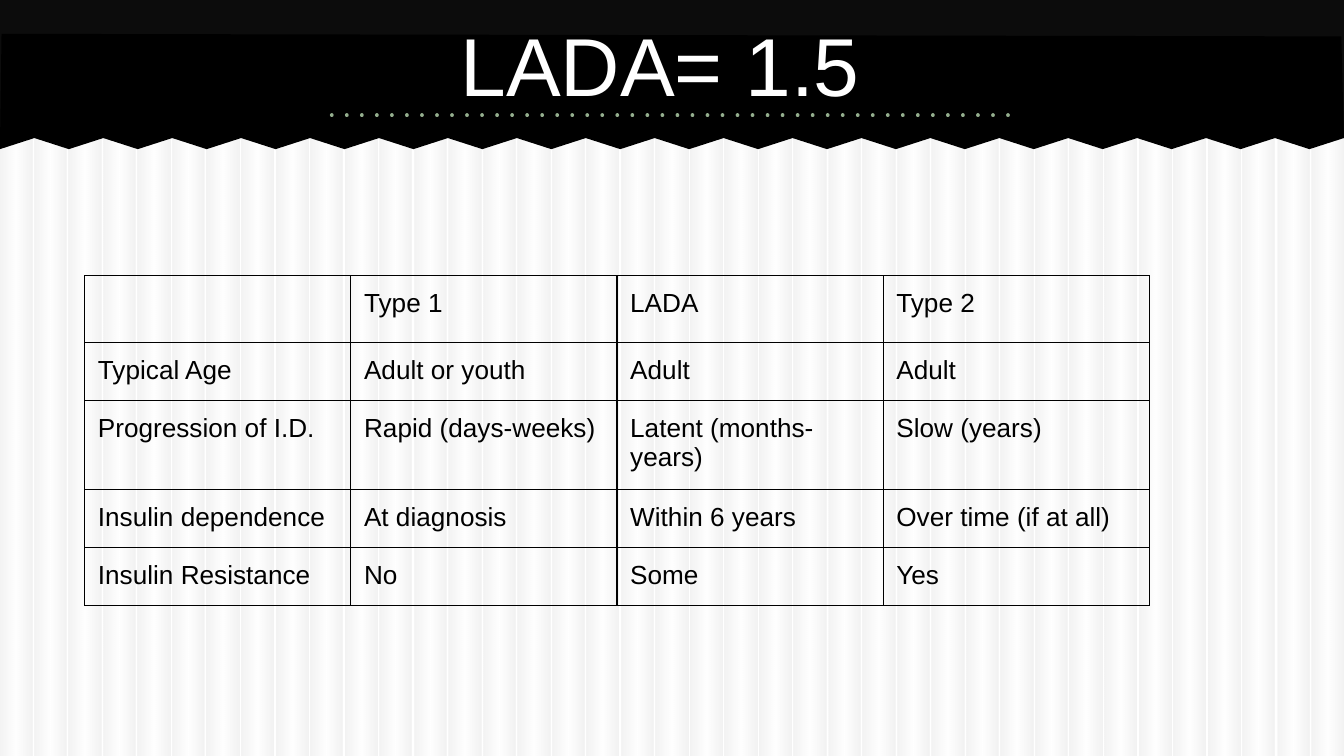
import pptx
import pptx.dml.color
import pptx.enum.shapes
import pptx.enum.text
import pptx.oxml
import pptx.oxml.ns
import pptx.util
from lxml import etree

Cm = pptx.util.Cm
qn = pptx.oxml.ns.qn
RECTANGLE = pptx.enum.shapes.MSO_SHAPE.RECTANGLE
NAMESPACE = 'xmlns:a="http://schemas.openxmlformats.org/drawingml/2006/main"'


def color(hex_string):
    return pptx.dml.color.RGBColor.from_string(hex_string)


def add_run(paragraph, text, size, hex_string):
    run = paragraph.add_run()
    run.text = text
    run.font.name = "Arial"
    run.font.size = pptx.util.Pt(size)
    run.font.color.rgb = color(hex_string)


presentation = pptx.Presentation()
presentation.slide_width = Cm(25.4)
presentation.slide_height = Cm(14.29)
slide = presentation.slides.add_slide(presentation.slide_layouts[6])
slide.background.fill.solid()
slide.background.fill.fore_color.rgb = color("FFFFFF")

# Striped backdrop
stripe_count = 39
stripe_stops = [(0, "BFBFBF"), (50, "FFFFFF"), (97, "BFBFBF"), (100, "BFBFBF")]
for index in range(stripe_count):
    left = Cm(24.79 * index / (stripe_count - 1))
    stripe = slide.shapes.add_shape(RECTANGLE, left, Cm(0.02), Cm(0.61), Cm(14.27))
    stripe.shadow.inherit = False
    stripe.line.fill.background()
    stripe.fill.gradient()
    stripe.fill.gradient_angle = 0
    stop_list = next(stripe.element.iter(qn("a:gsLst")))
    for stop in list(stop_list):
        stop_list.remove(stop)
    for position, hex_string in stripe_stops:
        stop_list.append(pptx.oxml.parse_xml(
            f'<a:gs {NAMESPACE} pos="{position * 1000}"><a:srgbClr val="{hex_string}">'
            '<a:alpha val="19000"/></a:srgbClr></a:gs>'))

# Header band with a torn lower edge
band = slide.shapes.add_shape(RECTANGLE, 0, 0, Cm(25.4), Cm(2.59))
tooth_step = 25.4 / stripe_count
torn_edge = [(25.4 - tooth_step * index, 2.82 if index % 2 else 2.61)
             for index in range(stripe_count + 1)]
builder = slide.shapes.build_freeform(Cm(0.03), Cm(0.64))
builder.add_line_segments(
    [(Cm(x), Cm(y)) for x, y in [(25.35, 0.69)] + torn_edge], close=True)
torn_paper = builder.convert_to_shape()
for shape, hex_string in [(band, "0C0C0C"), (torn_paper, "000000")]:
    shape.shadow.inherit = False
    shape.line.fill.background()
    shape.fill.solid()
    shape.fill.fore_color.rgb = color(hex_string)

dotted_line = slide.shapes.add_connector(
    pptx.enum.shapes.MSO_CONNECTOR.STRAIGHT, Cm(6.27), Cm(2.18), Cm(19.05), Cm(2.18))
dotted_line.line.color.rgb = color("94AE8E")
dotted_line.line.width = pptx.util.Pt(2)
line_element = dotted_line.get_or_add_ln()
line_element.set("cap", "rnd")
etree.SubElement(line_element, qn("a:prstDash"), val="dot")
etree.SubElement(dotted_line.element.spPr, qn("a:effectLst"))

title = slide.shapes.add_textbox(Cm(1.27), 0, Cm(22.86), Cm(2.39))
title_frame = title.text_frame
title_frame.word_wrap = True
title_frame.vertical_anchor = pptx.enum.text.MSO_ANCHOR.MIDDLE
title_frame.margin_top = title_frame.margin_bottom = Cm(0.25)
title_frame.margin_left = title_frame.margin_right = Cm(0.25)
title_paragraph = title_frame.paragraphs[0]
title_paragraph.alignment = pptx.enum.text.PP_ALIGN.CENTER
add_run(title_paragraph, "LADA= 1.5 ", 44, "FFFFFF")

# Comparison table
rows = [
    ["", "Type 1", "LADA", "Type 2"],
    ["Typical Age", "Adult or youth", "Adult", "Adult"],
    ["Progression of I.D.", "Rapid (days-weeks)", "Latent (months-years)", "Slow (years)"],
    ["Insulin dependence", "At diagnosis", "Within 6 years", "Over time (if at all)"],
    ["Insulin Resistance", "No", "Some", "Yes"],
]
row_heights = [1.06, 1.06, 1.61, 1.06, 1.06]
table = slide.shapes.add_table(
    len(rows), len(rows[0]), Cm(1.6), Cm(5.21), Cm(20.12), Cm(sum(row_heights))).table
table.first_row = False
table.horz_banding = False
for column in table.columns:
    column.width = Cm(5.03)
for row_index, texts in enumerate(rows):
    table.rows[row_index].height = Cm(row_heights[row_index])
    for column_index, text in enumerate(texts):
        cell = table.cell(row_index, column_index)
        cell.margin_left = cell.margin_right = Cm(0.25)
        cell.margin_top = cell.margin_bottom = Cm(0.25)
        cell_properties = cell._tc.get_or_add_tcPr()
        for side in ["lnL", "lnR", "lnT", "lnB"]:
            cell_properties.append(pptx.oxml.parse_xml(
                f'<a:{side} {NAMESPACE} w="9525"><a:solidFill>'
                f'<a:srgbClr val="000000"/></a:solidFill></a:{side}>'))
        cell.fill.background()
        if text:
            add_run(cell.text_frame.paragraphs[0], text, 14, "000000")

presentation.save("out.pptx")
